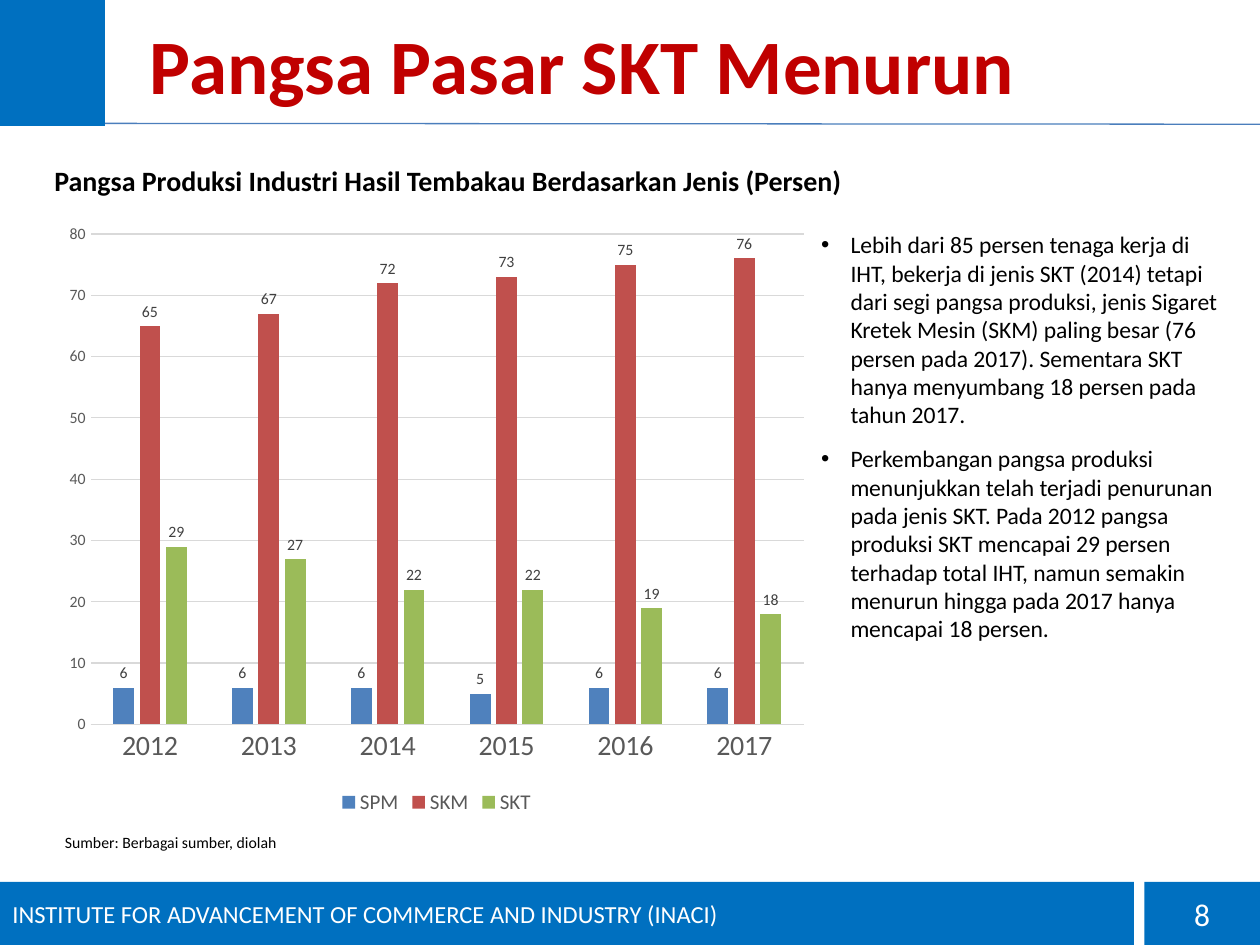
from lxml import etree
from pptx import Presentation
from pptx.chart.data import CategoryChartData
from pptx.dml.color import RGBColor
from pptx.enum.chart import XL_CHART_TYPE, XL_LABEL_POSITION, XL_LEGEND_POSITION, XL_TICK_MARK
from pptx.enum.shapes import MSO_CONNECTOR, MSO_SHAPE
from pptx.enum.text import MSO_ANCHOR, MSO_AUTO_SIZE, PP_ALIGN
from pptx.oxml.ns import qn
from pptx.util import Pt

COLUMNS = XL_CHART_TYPE.COLUMN_CLUSTERED
OUTSIDE = XL_LABEL_POSITION.OUTSIDE_END
BOTTOM = XL_LEGEND_POSITION.BOTTOM
NO_TICK = XL_TICK_MARK.NONE
STRAIGHT = MSO_CONNECTOR.STRAIGHT
RECT = MSO_SHAPE.RECTANGLE
MIDDLE = MSO_ANCHOR.MIDDLE
NO_FIT = MSO_AUTO_SIZE.NONE
LEFT, CENTER, JUSTIFY = PP_ALIGN.LEFT, PP_ALIGN.CENTER, PP_ALIGN.JUSTIFY

FONT = "Calibri"
COLORS = {
    "title": "C00000", "text": "000000", "white": "FFFFFF",
    "band": "0070C0", "rule": "4B7EBC", "grid": "D9D9D9",
    "axis": "595959", "label": "404040",
}
YEARS = ["2012", "2013", "2014", "2015", "2016", "2017"]
SHARES = [
    ("SPM", "4F81BD", (6, 6, 6, 5, 6, 6)),
    ("SKM", "C0504D", (65, 67, 72, 73, 75, 76)),
    ("SKT", "9BBB59", (29, 27, 22, 22, 19, 18)),
]
POINTS = [
    "Lebih dari 85 persen tenaga kerja di IHT, bekerja di jenis SKT (2014) "
    "tetapi dari segi pangsa produksi, jenis Sigaret Kretek Mesin (SKM) paling "
    "besar (76 persen pada 2017). Sementara SKT hanya menyumbang 18 persen "
    "pada tahun 2017.",
    "Perkembangan pangsa produksi menunjukkan telah terjadi penurunan pada "
    "jenis SKT. Pada 2012 pangsa produksi SKT mencapai 29 persen terhadap "
    "total IHT, namun semakin menurun hingga pada 2017 hanya mencapai 18 persen.",
]


def rgb(name):
    return RGBColor.from_string(COLORS[name])


def style(font, size, color, bold=False):
    font.name, font.size, font.bold = FONT, Pt(size), bold
    font.color.rgb = rgb(color)


def add_run(para, text, size, color, bold=False):
    run = para.add_run()
    run.text = text
    style(run.font, size, color, bold)


def place(shape, left, top, width, height):
    shape.left, shape.top = Pt(left), Pt(top)
    shape.width, shape.height = Pt(width), Pt(height)


def add_title(slide, text):
    title = slide.shapes.title
    place(title, 60, -3, 546, 78.5)
    title.text_frame.auto_size = NO_FIT
    title.text_frame.vertical_anchor = MIDDLE
    para = title.text_frame.paragraphs[0]
    para.alignment = CENTER
    add_run(para, text, 44, "title", True)


def add_list(slide, items):
    body = slide.placeholders[1]
    place(body, 462, 128, 244, 271)
    frame = body.text_frame
    frame.auto_size = NO_FIT
    for i, item in enumerate(items):
        para = frame.add_paragraph() if i else frame.paragraphs[0]
        para.space_before = Pt(9)
        props = para._p.get_or_add_pPr()
        props.set("marL", str(Pt(16.8)))
        props.set("indent", str(-Pt(16.8)))
        add_run(para, item, 13.5, "text")


def add_label(slide, box, text, size, bold=False):
    frame = slide.shapes.add_textbox(*map(Pt, box)).text_frame
    frame.word_wrap = False
    para = frame.paragraphs[0]
    add_run(para, text, size, "text", bold)
    return para


def add_band(slide, box, text="", size=14, align=LEFT):
    band = slide.shapes.add_shape(RECT, *map(Pt, box))
    band.shadow.inherit = False
    band.fill.solid()
    band.fill.fore_color.rgb = rgb("band")
    band.line.fill.background()
    if text:
        band.text_frame.word_wrap = True
        band.text_frame.vertical_anchor = MIDDLE
        para = band.text_frame.paragraphs[0]
        para.alignment = align
        add_run(para, text, size, "white")


def add_rule(slide, *ends):
    rule = slide.shapes.add_connector(STRAIGHT, *map(Pt, ends))
    rule.line.color.rgb = rgb("rule")
    rule.line.width = Pt(0.75)
    etree.SubElement(rule._element.spPr, qn("a:effectLst"))


def set_axis(axis, size):
    axis.major_tick_mark = axis.minor_tick_mark = NO_TICK
    style(axis.tick_labels.font, size, "axis")


def add_chart(slide, box):
    data = CategoryChartData(number_format="0")
    data.categories = YEARS
    for name, _, values in SHARES:
        data.add_series(name, values)
    chart = slide.shapes.add_chart(COLUMNS, *map(Pt, box), data).chart
    style(chart.font, 10, "text")
    chart.has_title = False

    # Legend
    chart.has_legend = True
    chart.legend.position = BOTTOM
    chart.legend.include_in_layout = False
    style(chart.legend.font, 12, "axis")

    # Axes
    years, shares = chart.category_axis, chart.value_axis
    set_axis(years, 16)
    set_axis(shares, 9)
    shares.minimum_scale, shares.maximum_scale, shares.major_unit = 0, 80, 10
    shares.format.line.fill.background()
    for line in (years.format.line, shares.major_gridlines.format.line):
        line.color.rgb = rgb("grid")
        line.width = Pt(0.75)

    # Columns
    plot = chart.plots[0]
    plot.gap_width, plot.overlap = 219, -27
    plot.vary_by_categories = False
    for series, (_, color, _) in zip(plot.series, SHARES):
        series.format.fill.solid()
        series.format.fill.fore_color.rgb = RGBColor.from_string(color)
        labels = series.data_labels
        labels.show_value = True
        labels.position = OUTSIDE
        style(labels.font, 9, "label")


def main():
    deck = Presentation()
    deck.slide_width, deck.slide_height = Pt(720), Pt(540)
    slide = deck.slides.add_slide(deck.slide_layouts[1])

    # Heading
    add_title(slide, "Pangsa Pasar SKT Menurun")
    add_band(slide, (0, 0, 60, 72))
    add_rule(slide, 60, 70.5, 720, 71)

    # Chart with its heading and source
    add_chart(slide, (31, 121.5, 437, 347))
    add_label(slide, (24, 90, 474, 26.5),
              "Pangsa Produksi Industri Hasil Tembakau Berdasarkan Jenis (Persen)",
              16, True)
    credit = add_label(slide, (30, 469.5, 137.5, 20),
                       "Sumber: Berbagai sumber, diolah", 9)
    credit.alignment = JUSTIFY
    credit.line_spacing = 1.25
    credit.space_after = Pt(4.5)

    # Findings
    add_list(slide, POINTS)

    # Footer
    add_band(slide, (0, 504, 648, 36),
             "INSTITUTE FOR ADVANCEMENT OF COMMERCE AND INDUSTRY (INACI)")
    add_band(slide, (654, 504, 66, 36), "8", 18, CENTER)

    deck.save("out.pptx")


if __name__ == "__main__":
    main()
